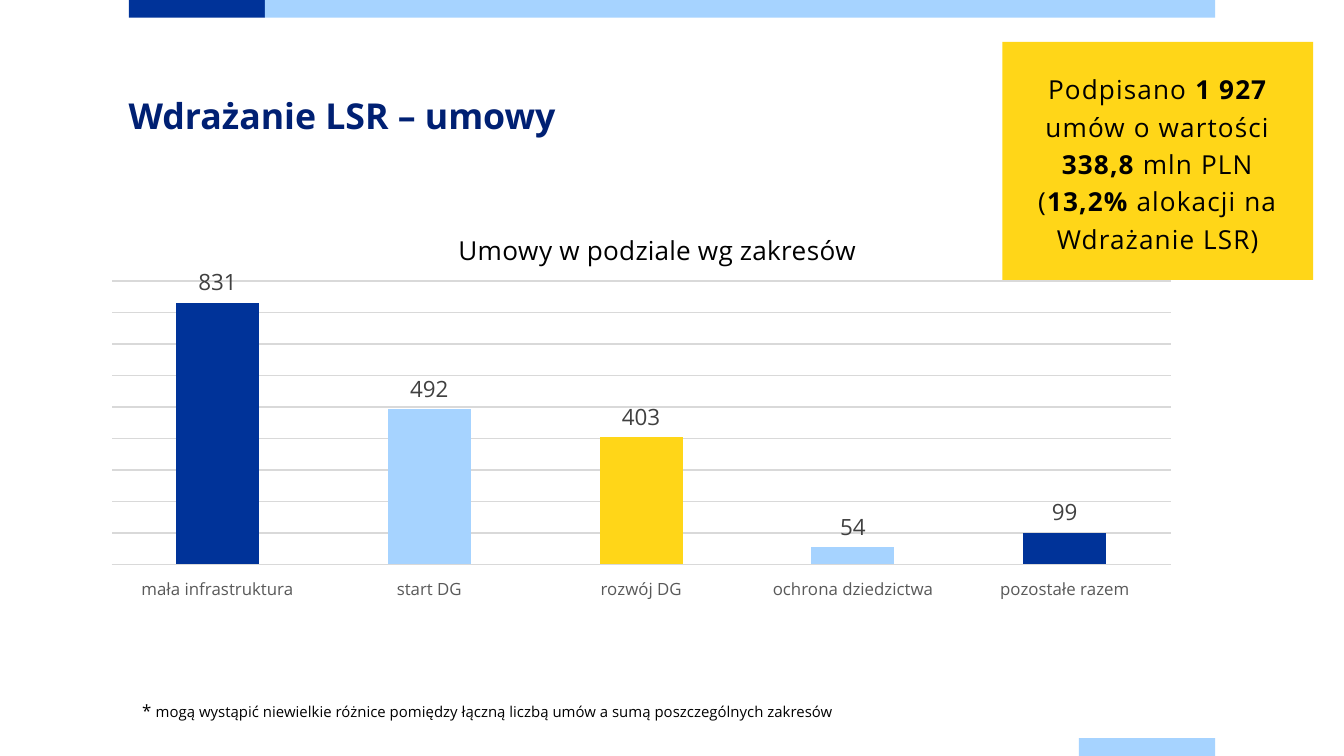
"""Builds the slide on signed contracts with its column chart."""
from pptx import Presentation
from pptx.chart.data import CategoryChartData as ChartData
from pptx.dml.color import RGBColor as RGB
from pptx.enum.chart import XL_CHART_TYPE as Kind, XL_LABEL_POSITION as Spot
from pptx.enum.chart import XL_TICK_LABEL_POSITION as TickSpot, XL_TICK_MARK as Tick
from pptx.enum.shapes import MSO_SHAPE as Form
from pptx.enum.text import MSO_ANCHOR as Anchor, PP_ALIGN as Align
from pptx.oxml import parse_xml
from pptx.oxml.ns import nsdecls, qn
from pptx.util import Pt

NAVY, SKY, GOLD, BLACK = "003399", "A6D3FF", "FFD618", "000000"
GRID, GREY, DARK = "D9D9D9", "595959", "404040"


def tint(code):
    return RGB.from_string(code)


def layout(parent, index, inner=False, **sizes):
    for old in parent.findall(qn("c:layout")):
        parent.remove(old)
    target = '<c:layoutTarget val="inner"/>' if inner else ""
    modes = "".join(f'<c:{k}Mode val="edge"/>' for k in "xy")
    vals = "".join(f'<c:{k} val="{v}"/>' for k, v in sizes.items())
    parent.insert(index, parse_xml(
        f'<c:layout {nsdecls("c")}><c:manualLayout>{target}{modes}{vals}'
        '</c:manualLayout></c:layout>'))


class Deck:
    def __init__(self, font, wide, high):
        self.face = font
        self.prs = Presentation()
        self.prs.slide_width, self.prs.slide_height = Pt(wide), Pt(high)
        self.slide = self.prs.slides.add_slide(self.prs.slide_layouts[6])

    def font(self, font, size, color=BLACK, bold=False):
        font.name, font.size, font.bold = self.face, Pt(size), bold
        font.color.rgb = tint(color)

    def rect(self, box, color):
        shape = self.slide.shapes.add_shape(Form.RECTANGLE, *map(Pt, box))
        shape.shadow.inherit = False
        shape.fill.solid()
        shape.fill.fore_color.rgb = tint(color)
        shape.line.fill.background()
        return shape

    def add_runs(self, para, runs, color=BLACK, lead=None, space=0):
        if lead:
            para.line_spacing = Pt(lead)
        for text, size, bold in runs:
            run = para.add_run()
            run.text = text
            self.font(run.font, size, color, bold)
            if space:
                run.font._element.set("spc", str(space))

    def text(self, box, runs, color=BLACK, lead=None, pad=None):
        frame = self.slide.shapes.add_textbox(*map(Pt, box)).text_frame
        frame.word_wrap = True
        if pad is not None:
            frame.margin_left = frame.margin_right = Pt(pad)
            frame.margin_top = frame.margin_bottom = Pt(pad)
        self.add_runs(frame.paragraphs[0], runs, color, lead)

    def card(self, box, color, runs, lead, space):
        frame = self.rect(box, color).text_frame
        frame.word_wrap, frame.vertical_anchor = True, Anchor.MIDDLE
        para = frame.paragraphs[0]
        para.alignment = Align.CENTER
        self.add_runs(para, runs, lead=lead, space=space)

    def chart(self, box, title, rows):
        data = ChartData()
        data.categories = [name for name, _, _ in rows]
        data.add_series("Umowy", [val for _, val, _ in rows])
        chart = self.slide.shapes.add_chart(
            Kind.COLUMN_CLUSTERED, *map(Pt, box), data).chart
        self.font(chart.font, 10)
        chart.has_legend = False
        self.add_runs(chart.chart_title.text_frame.paragraphs[0], [(title, 14, False)])
        layout(chart.chart_title._element, 1, x=0.33, y=0.04)
        layout(chart._chartSpace.chart.plotArea, 0, True,
               x=0.02, y=0.18, w=0.96, h=0.7)
        self.axes(chart)
        self.bars(chart.plots[0], [color for _, _, color in rows])

    def axes(self, chart):
        cat, val = chart.category_axis, chart.value_axis
        cat.major_tick_mark = Tick.NONE
        cat.tick_label_position = TickSpot.LOW
        self.font(cat.tick_labels.font, 9, GREY)
        val.visible = False
        val.minimum_scale, val.maximum_scale, val.major_unit = 0, 900, 100
        val.has_major_gridlines = True
        for line in (cat.format.line, val.major_gridlines.format.line):
            line.color.rgb, line.width = tint(GRID), Pt(0.75)

    def bars(self, plot, colors):
        plot.gap_width, plot.overlap, plot.vary_by_categories = 155, -27, False
        for index, color in enumerate(colors):
            fill = plot.series[0].points[index].format.fill
            fill.solid()
            fill.fore_color.rgb = tint(color)
        plot.has_data_labels = True
        labels = plot.data_labels
        labels.show_value, labels.position = True, Spot.OUTSIDE_END
        self.font(labels.font, 12, DARK)


def main():
    deck = Deck("Open Sans", 720, 405)
    left, step, right, band = 69, 73, 651, 9.5
    deck.rect((left, 0, step, band), NAVY)
    deck.rect((left + step, 0, right - left - step, band), SKY)
    deck.rect((right - step, 405 - band, step, band), SKY)
    deck.text((left, 48.5, right - left, 57.5),
              [("Wdrażanie LSR – umowy", 19.1, True)], "002073", 24.5, 0)
    deck.chart((48, 111.5, 591, 217), "Umowy w podziale wg zakresów", [
        ("mała infrastruktura", 831, NAVY),
        ("start DG", 492, SKY),
        ("rozwój DG", 403, GOLD),
        ("ochrona dziedzictwa", 54, SKY),
        ("pozostałe razem", 99, NAVY)])
    deck.text((left, 372, 506, 18), [
        ("* ", 9, False),
        ("mogą wystąpić niewielkie różnice pomiędzy łączną liczbą umów "
         "a sumą poszczególnych zakresów", 8, False)])
    parts = ["Podpisano ", "1 927", " umów o wartości ", "338,8",
             " mln PLN (", "13,2%", " alokacji na Wdrażanie LSR)"]
    runs = [(part, 14, index % 2 == 1) for index, part in enumerate(parts)]
    deck.card((537, 22.5, 166.5, 127.5), GOLD, runs, 20, 60)
    deck.prs.save("out.pptx")


if __name__ == "__main__":
    main()
